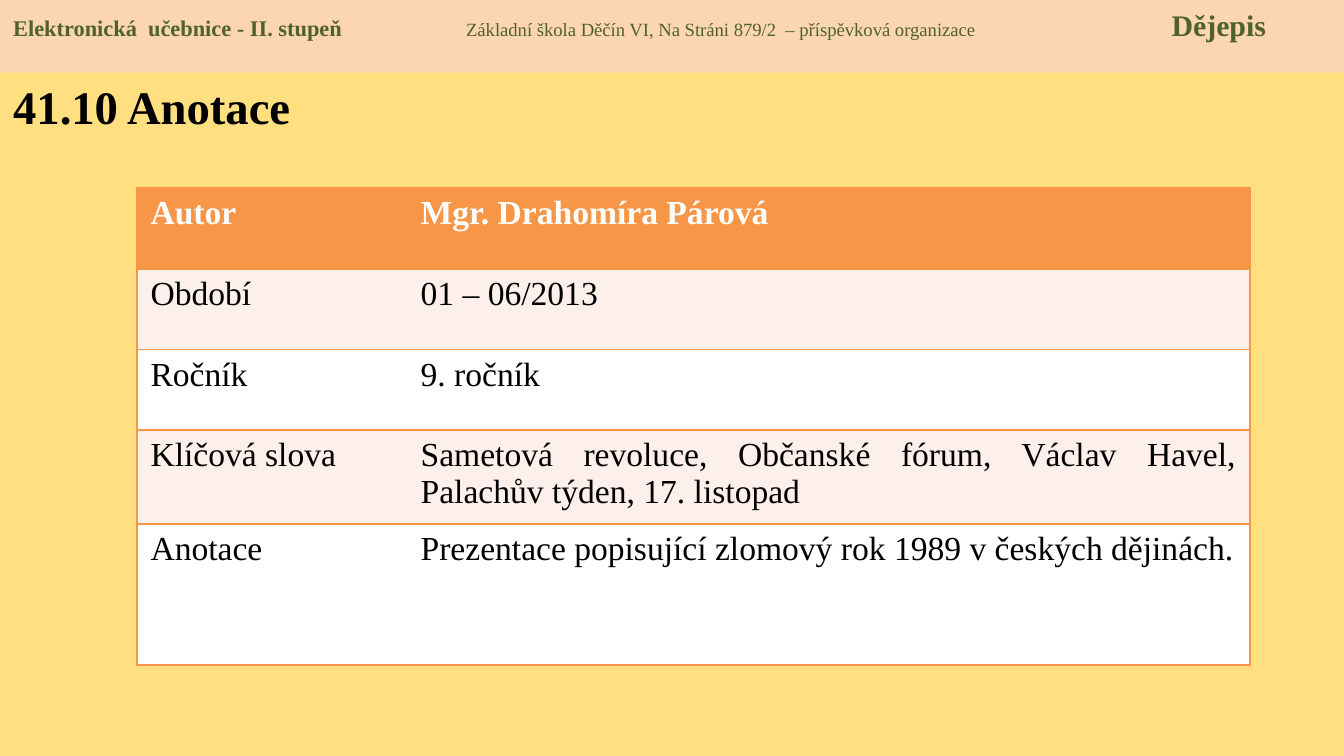
import pptx
import pptx.dml.color
import pptx.enum.shapes
import pptx.enum.text
import pptx.oxml.ns
import pptx.util
from lxml import etree

Inches = pptx.util.Inches
RGBColor = pptx.dml.color.RGBColor

SAND = RGBColor(0xFF, 0xDF, 0x80)
PEACH = RGBColor(0xFC, 0xD5, 0xB5)
OLIVE = RGBColor(0x4F, 0x62, 0x28)
ORANGE = RGBColor(0xF7, 0x96, 0x46)
BLUSH = RGBColor(0xFD, 0xEF, 0xE9)
WHITE = RGBColor(0xFF, 0xFF, 0xFF)
BLACK = RGBColor(0x00, 0x00, 0x00)
FONT = "Times New Roman"

HEADER_PARTS = [
    ("Elektronická  učebnice - II. stupeň", 12, True),
    ("\tZákladní škola Děčín VI, Na Stráni 879/2  – příspěvková organizace", 10, False),
    ("\tDějepis", 16, True),
]
HEADER_TABS = [3.37, 8.62]
ANNOTATION = [
    ("Autor", "Mgr. Drahomíra Párová"),
    ("Období", "01 – 06/2013"),
    ("Ročník", "9. ročník"),
    ("Klíčová slova", "Sametová revoluce, Občanské fórum, Václav Havel, Palachův týden, 17. listopad"),
    ("Anotace", "Prezentace popisující zlomový rok 1989 v českých dějinách."),
]
COLUMN_WIDTHS = [2.01, 6.27]
ROW_HEIGHTS = [0.6, 0.6, 0.6, 0.7, 1.05]


def style_run(run, size, color, bold):
    """Apply the slide's typeface with the given size, colour and weight."""
    run.font.name = FONT
    run.font.size = pptx.util.Pt(size)
    run.font.color.rgb = color
    run.font.bold = bold


def add_tab_stops(paragraph, positions):
    """Set left tab stops, in inches from the text edge."""
    qn = pptx.oxml.ns.qn
    stops = etree.SubElement(paragraph._p.get_or_add_pPr(), qn("a:tabLst"))
    for position in positions:
        etree.SubElement(stops, qn("a:tab"), pos=str(Inches(position)), algn="l")


def add_border(cell, side, visible):
    """Draw a one-point orange line on one side of a cell, or clear that side."""
    qn = pptx.oxml.ns.qn
    line = etree.SubElement(cell._tc.get_or_add_tcPr(), qn(f"a:ln{side}"), w=str(pptx.util.Pt(1)))
    if visible:
        fill = etree.SubElement(line, qn("a:solidFill"))
        etree.SubElement(fill, qn("a:srgbClr"), val=str(ORANGE))
    else:
        etree.SubElement(line, qn("a:noFill"))


def add_header(slide, left, top, width, height):
    """Place the band with the textbook, school and subject."""
    band = slide.shapes.add_shape(
        pptx.enum.shapes.MSO_SHAPE.RECTANGLE, Inches(left), Inches(top), Inches(width), Inches(height))
    band.shadow.inherit = False
    band.fill.solid()
    band.fill.fore_color.rgb = PEACH
    band.line.fill.background()
    band.text_frame.vertical_anchor = pptx.enum.text.MSO_ANCHOR.TOP
    paragraph = band.text_frame.paragraphs[0]
    paragraph.alignment = pptx.enum.text.PP_ALIGN.LEFT
    add_tab_stops(paragraph, HEADER_TABS)
    for text, size, bold in HEADER_PARTS:
        run = paragraph.add_run()
        run.text = text
        style_run(run, size, OLIVE, bold)


def add_title(slide, left, top, width, height):
    """Place the section title."""
    title = slide.shapes.add_textbox(Inches(left), Inches(top), Inches(width), Inches(height))
    title.text_frame.word_wrap = True
    title.text_frame.text = "41.10 Anotace"
    style_run(title.text_frame.paragraphs[0].runs[0], 25, BLACK, True)


def add_annotation_table(slide, left, top):
    """Place the annotation table with a header row and banded rows."""
    table = slide.shapes.add_table(
        len(ANNOTATION), len(COLUMN_WIDTHS), Inches(left), Inches(top),
        Inches(sum(COLUMN_WIDTHS)), Inches(sum(ROW_HEIGHTS))).table
    for column, width in zip(table.columns, COLUMN_WIDTHS):
        column.width = Inches(width)
    for row, height in zip(table.rows, ROW_HEIGHTS):
        row.height = Inches(height)
    for row_index, entry in enumerate(ANNOTATION):
        is_head = row_index == 0
        band = ORANGE if is_head else BLUSH if row_index % 2 else WHITE
        for column_index, text in enumerate(entry):
            cell = table.cell(row_index, column_index)
            inner_side = "L" if column_index else "R"
            for side in "LRTB":
                add_border(cell, side, side != inner_side)
            cell.fill.solid()
            cell.fill.fore_color.rgb = band
            cell.text_frame.text = text
            paragraph = cell.text_frame.paragraphs[0]
            paragraph.alignment = pptx.enum.text.PP_ALIGN.JUSTIFY
            style_run(paragraph.runs[0], 18, WHITE if is_head else BLACK, is_head)


def main():
    """Build the annotation slide and save it."""
    presentation = pptx.Presentation()
    presentation.slide_width = Inches(10)
    presentation.slide_height = Inches(10) * 9 // 16
    slide = presentation.slides.add_slide(presentation.slide_layouts[6])
    slide.background.fill.solid()
    slide.background.fill.fore_color.rgb = SAND
    add_header(slide, 0, 0, 10, 0.54)
    add_annotation_table(slide, 1.02, 1.4)
    add_title(slide, 0, 0.53, 3.74, 0.65)
    presentation.save("out.pptx")


if __name__ == "__main__":
    main()
